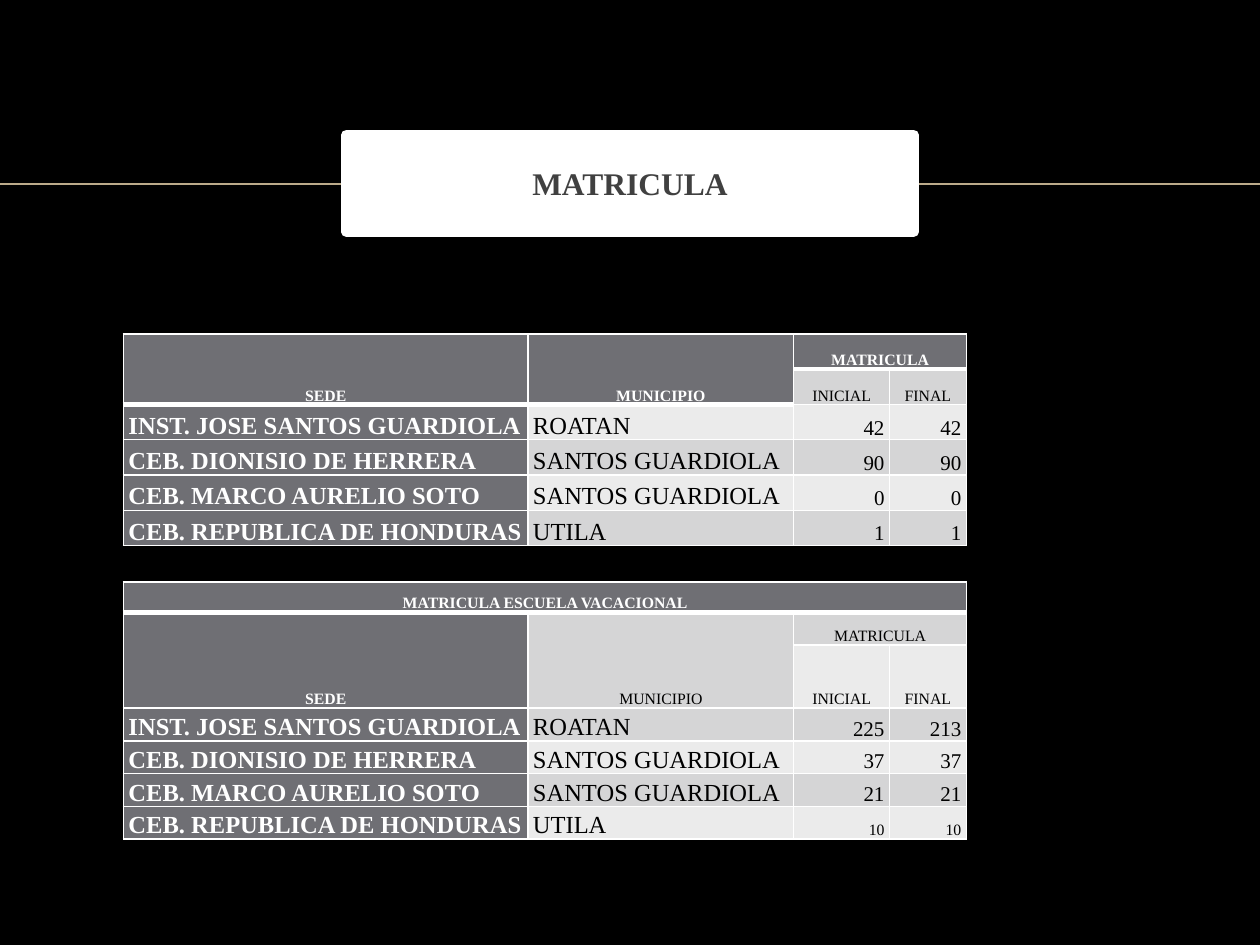
from lxml.etree import SubElement
from pptx import Presentation
from pptx.dml.color import RGBColor
from pptx.enum.shapes import MSO_CONNECTOR
from pptx.enum.text import MSO_ANCHOR, MSO_AUTO_SIZE, PP_ALIGN
from pptx.oxml.ns import qn
from pptx.util import Inches, Pt

COLORS = {
    "background": "000000",
    "rule": "BBAA8A",
    "white": "FFFFFF",
    "black": "000000",
    "title": "404040",
    "header": "6F6F74",
    "odd": "D5D5D6",
    "even": "EBEBEB",
}
FONT = "Times New Roman"
COL_WIDTHS = [3.21, 2.11, 0.76, 0.61]
PLACES = [
    ("INST. JOSE SANTOS GUARDIOLA", "ROATAN"),
    ("CEB. DIONISIO DE HERRERA", "SANTOS GUARDIOLA"),
    ("CEB. MARCO AURELIO SOTO", "SANTOS GUARDIOLA"),
    ("CEB. REPUBLICA DE HONDURAS", "UTILA"),
]
HEADINGS = [["SEDE", "MUNICIPIO", "MATRICULA", ""], ["", "", "INICIAL", "FINAL"]]
REGULAR = [(42, 42), (90, 90), (0, 0), (1, 1)]
VACATION = [(225, 213), (37, 37), (21, 21), (10, 10)]


def rgb(name):
    return RGBColor.from_string(COLORS[name])


def set_text(tf, text, size=12, color="black", bold=False, align=PP_ALIGN.LEFT,
             spacing=None, before=None):
    p = tf.paragraphs[0]
    p.alignment = align
    p.line_spacing = spacing
    p.space_before = before
    r = p.add_run()
    r.text = text
    r.font.name = FONT
    r.font.size = Pt(size)
    r.font.bold = bold
    r.font.color.rgb = rgb(color)


def set_border(cell, side, width):
    tc_pr = cell._tc.get_or_add_tcPr()
    ln = SubElement(tc_pr, qn(f"a:ln{side}"), w=str(Pt(width)))
    fill = SubElement(ln, qn("a:solidFill"))
    SubElement(fill, qn("a:srgbClr"), val=COLORS["white"])


def format_cell(cell, row, col):
    cell.margin_left = cell.margin_right = Inches(0.04)
    cell.margin_top = cell.margin_bottom = 0
    cell.vertical_anchor = MSO_ANCHOR.BOTTOM
    set_border(cell, "L", 1)
    set_border(cell, "R", 1)
    if row == 0:
        set_border(cell, "T", 1)
    set_border(cell, "B", 3 if row == 0 else 1)
    dark = row == 0 or col == 0
    cell.fill.solid()
    cell.fill.fore_color.rgb = rgb("header" if dark else "odd" if row % 2 else "even")


def add_enrollment_table(s, top, heights, headings, counts, merges, last_size=12):
    rows = headings + [[*place, *map(str, pair)] for place, pair in zip(PLACES, counts)]
    frame = s.shapes.add_table(len(rows), len(COL_WIDTHS), Inches(0.98), Inches(top),
                               Inches(sum(COL_WIDTHS)), Inches(sum(heights)))
    table = frame.table
    table.horz_banding = False
    for column, width in zip(table.columns, COL_WIDTHS):
        column.width = Inches(width)
    for row, height in zip(table.rows, heights):
        row.height = Inches(height)
    for start, end in merges:
        table.cell(*start).merge(table.cell(*end))
    for i, row in enumerate(rows):
        for j, text in enumerate(row):
            cell = table.cell(i, j)
            format_cell(cell, i, j)
            if not text:
                continue
            if i < len(headings):
                size, align = 9, PP_ALIGN.CENTER
            elif j < 2:
                size, align = 14, PP_ALIGN.LEFT
            else:
                size = last_size if i == len(rows) - 1 else 12
                align = PP_ALIGN.RIGHT
            dark = i == 0 or j == 0
            set_text(cell.text_frame, text, size=size, color="white" if dark else "black",
                     bold=dark, align=align, spacing=1.07)


def add_rule(s, y):
    line = s.shapes.add_connector(MSO_CONNECTOR.STRAIGHT, 0, Inches(y), Inches(10), Inches(y))
    line.line.color.rgb = rgb("rule")
    line.line.width = Pt(1)
    SubElement(line._element.spPr, qn("a:effectLst"))


def format_title(s, text):
    sp = s.shapes.title
    sp.left, sp.top = Inches(2.75), Inches(1.07)
    sp.width, sp.height = Inches(4.5), Inches(0.77)
    sp.fill.solid()
    sp.fill.fore_color.rgb = rgb("white")
    sp.line.color.rgb = rgb("white")
    sp.line.width = Pt(6)
    tf = sp.text_frame
    tf.word_wrap = True
    tf.auto_size = MSO_AUTO_SIZE.NONE
    tf.vertical_anchor = MSO_ANCHOR.MIDDLE
    set_text(tf, text, size=18, color="title", bold=True, align=PP_ALIGN.CENTER, before=Pt(4))
    s.shapes._spTree.append(sp._element)


def heading_merges(row):
    return [((row, 0), (row + 1, 0)), ((row, 1), (row + 1, 1)), ((row, 2), (row, 3))]


def main():
    prs = Presentation()
    prs.slide_width, prs.slide_height = Inches(10), Inches(7.5)
    s = prs.slides.add_slide(prs.slide_layouts[5])
    s.background.fill.solid()
    s.background.fill.fore_color.rgb = rgb("background")
    add_rule(s, 1.46)
    add_enrollment_table(s, 2.65, [0.28] * 6, HEADINGS, REGULAR, heading_merges(0))
    add_enrollment_table(s, 4.62, [0.24, 0.26, 0.5] + [0.26] * 4,
                         [["MATRICULA ESCUELA VACACIONAL", "", "", ""]] + HEADINGS, VACATION,
                         [((0, 0), (0, 3))] + heading_merges(1), last_size=9)
    format_title(s, "MATRICULA")
    prs.save("out.pptx")


if __name__ == "__main__":
    main()
